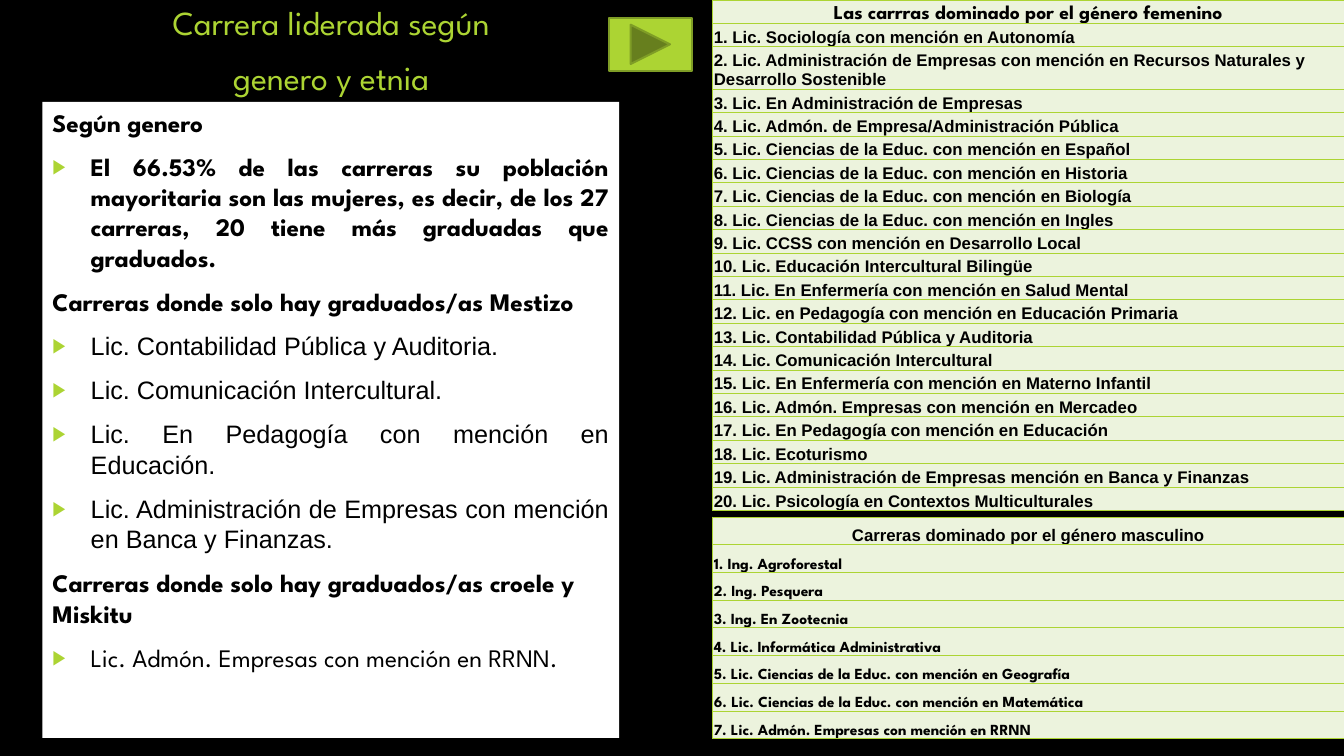
from dataclasses import dataclass

from lxml import etree
from pptx import Presentation
from pptx import util as u
from pptx.dml.color import RGBColor
from pptx.enum import shapes, text
from pptx.oxml.ns import qn


@dataclass(frozen=True)
class Theme:
    """Colours, fonts and type sizes of the slide."""
    black: str = "000000"
    white: str = "FFFFFF"
    lime: str = "ACD433"
    olive: str = "7F9D26"
    pale: str = "ECF3DD"
    display: str = "League Spartan"
    plain: str = "Arial"
    title: int = 24
    body: int = 18
    header: int = 14
    row: int = 12
    small: int = 11


THEME = Theme()
ALIGN = text.PP_ALIGN

TITLE = ["Carrera liderada según", "genero y etnia"]

FINDINGS = [
    ("Según genero", False, THEME.display, True, ALIGN.JUSTIFY),
    ("El 66.53% de las carreras su población mayoritaria son las mujeres, es decir, "
     "de los 27 carreras, 20 tiene más graduadas que graduados.",
     True, THEME.display, True, ALIGN.JUSTIFY),
    ("Carreras donde solo hay graduados/as Mestizo", False, THEME.display, True, ALIGN.JUSTIFY),
    ("Lic. Contabilidad Pública y Auditoria.", True, THEME.plain, False, ALIGN.JUSTIFY),
    ("Lic. Comunicación Intercultural.", True, THEME.plain, False, ALIGN.JUSTIFY),
    ("Lic. En Pedagogía con mención en Educación.", True, THEME.plain, False, ALIGN.JUSTIFY),
    ("Lic. Administración de Empresas con mención en Banca y Finanzas.",
     True, THEME.plain, False, ALIGN.JUSTIFY),
    ("Carreras donde solo hay graduados/as croele y Miskitu",
     False, THEME.display, True, ALIGN.LEFT),
    ("Lic. Admón. Empresas con mención en RRNN.", True, THEME.display, False, ALIGN.LEFT),
]

FEMALE_CAREERS = [
    "Lic. Sociología con mención en Autonomía",
    "Lic. Administración de Empresas con mención en Recursos Naturales y Desarrollo Sostenible",
    "Lic. En Administración de Empresas",
    "Lic. Admón. de Empresa/Administración Pública",
    "Lic. Ciencias de la Educ. con mención en Español",
    "Lic. Ciencias de la Educ. con mención en Historia",
    "Lic. Ciencias de la Educ. con mención en Biología",
    "Lic. Ciencias de la Educ. con mención en Ingles",
    "Lic. CCSS con mención en Desarrollo Local",
    "Lic. Educación Intercultural Bilingüe",
    "Lic. En Enfermería con mención en Salud Mental",
    "Lic. en Pedagogía con mención en Educación Primaria",
    "Lic. Contabilidad Pública y Auditoria",
    "Lic. Comunicación Intercultural",
    "Lic. En Enfermería con mención en Materno Infantil",
    "Lic. Admón. Empresas con mención en Mercadeo",
    "Lic. En Pedagogía con mención en Educación",
    "Lic. Ecoturismo",
    "Lic. Administración de Empresas mención en Banca y Finanzas",
    "Lic. Psicología en Contextos Multiculturales",
]

MALE_CAREERS = [
    "Ing. Agroforestal",
    "Ing. Pesquera",
    "Ing. En Zootecnia",
    "Lic. Informática Administrativa",
    "Lic. Ciencias de la Educ. con mención en Geografía",
    "Lic. Ciencias de la Educ. con mención en Matemática",
    "Lic. Admón. Empresas con mención en RRNN",
]


def rgb(value):
    """Turn a hex string into a colour."""
    return RGBColor.from_string(value)


def style(paragraph, font, size, color, bold, align):
    """Format a whole paragraph."""
    paragraph.alignment = align
    paragraph.font.name = font
    paragraph.font.size = u.Pt(size)
    paragraph.font.color.rgb = rgb(color)
    paragraph.font.bold = bold


def set_bullet(paragraph, bulleted):
    """Give a paragraph the arrow bullet, or clear the inherited one."""
    props = paragraph._p.get_or_add_pPr()
    indent = u.Inches(0.38) if bulleted else 0
    props.set("marL", str(indent))
    props.set("indent", str(-indent))
    if not bulleted:
        etree.SubElement(props, qn("a:buNone"))
        return
    color = etree.SubElement(props, qn("a:buClr"))
    etree.SubElement(color, qn("a:srgbClr"), val=THEME.lime)
    etree.SubElement(props, qn("a:buSzPct"), val="80000")
    etree.SubElement(props, qn("a:buFont"), typeface=THEME.plain)
    etree.SubElement(props, qn("a:buChar"), char="▶")


def place(shape, box):
    """Move a shape to a box given in inches."""
    shape.left, shape.top, shape.width, shape.height = map(u.Inches, box)


def fill_frame(placeholder, box, anchor, count):
    """Place a placeholder and return its paragraphs, spaced evenly."""
    place(placeholder, box)
    frame = placeholder.text_frame
    frame.word_wrap = True
    frame.auto_size = text.MSO_AUTO_SIZE.NONE
    frame.vertical_anchor = anchor
    paragraphs = [frame.paragraphs[0]] + [frame.add_paragraph() for _ in range(count - 1)]
    for index, paragraph in enumerate(paragraphs):
        paragraph.space_before = u.Pt(10 if index else 0)
    return paragraphs


def add_title(slide, box):
    """Write the two-line heading."""
    paragraphs = fill_frame(slide.shapes.title, box, text.MSO_ANCHOR.BOTTOM, len(TITLE))
    for paragraph, line in zip(paragraphs, TITLE):
        paragraph.text = line
        style(paragraph, THEME.display, THEME.title, THEME.lime, False, ALIGN.CENTER)


def add_findings(slide, box):
    """Write the white panel of findings by gender and ethnicity."""
    panel = slide.placeholders[1]
    panel.fill.solid()
    panel.fill.fore_color.rgb = rgb(THEME.white)
    paragraphs = fill_frame(panel, box, text.MSO_ANCHOR.TOP, len(FINDINGS))
    for paragraph, (line, bulleted, font, bold, align) in zip(paragraphs, FINDINGS):
        paragraph.text = line
        set_bullet(paragraph, bulleted)
        style(paragraph, font, THEME.body, THEME.black, bold, align)


def format_cell(cell, line, font, size, align):
    """Fill one bordered table cell."""
    props = cell._tc.get_or_add_tcPr()
    for side in "LRTB":
        border = etree.SubElement(props, qn(f"a:ln{side}"), w=str(u.Pt(0.75)))
        paint = etree.SubElement(border, qn("a:solidFill"))
        etree.SubElement(paint, qn("a:srgbClr"), val=THEME.lime)
    cell.fill.solid()
    cell.fill.fore_color.rgb = rgb(THEME.pale)
    cell.margin_left = cell.margin_right = cell.margin_top = u.Inches(0.01)
    cell.margin_bottom = 0
    cell.vertical_anchor = text.MSO_ANCHOR.BOTTOM
    cell.text = line
    style(cell.text_frame.paragraphs[0], font, size, THEME.black, True, align)


def add_careers(slide, box, heading, careers, heading_type, row_type, tall_rows=()):
    """Build a numbered one-column table; tall_rows lists the two-line rows."""
    count, tall = len(careers) + 1, 0.42
    table = slide.shapes.add_table(count, 1, *map(u.Inches, box)).table
    regular = (box[3] - tall * len(tall_rows)) / (count - len(tall_rows))
    for index, row in enumerate(table.rows):
        row.height = u.Inches(tall if index in tall_rows else regular)
    format_cell(table.cell(0, 0), heading, *heading_type, ALIGN.CENTER)
    for number, career in enumerate(careers, 1):
        format_cell(table.cell(number, 0), f"{number}. {career}", *row_type, ALIGN.LEFT)


def add_next_button(slide, box):
    """Draw the forward button."""
    button = slide.shapes.add_shape(
        shapes.MSO_SHAPE.ACTION_BUTTON_FORWARD_OR_NEXT, *map(u.Inches, box))
    button.shadow.inherit = False
    button.fill.solid()
    button.fill.fore_color.rgb = rgb(THEME.lime)
    button.line.color.rgb = rgb(THEME.olive)
    button.line.width = u.Pt(1.5)


def main():
    """Build and save the slide."""
    deck = Presentation()
    deck.slide_width, deck.slide_height = u.Inches(13.33), u.Inches(7.5)
    slide = deck.slides.add_slide(deck.slide_layouts[1])
    slide.background.fill.solid()
    slide.background.fill.fore_color.rgb = rgb(THEME.black)
    add_careers(slide, (7.07, 0, 6.26, 5.07), "Las carrras dominado por el género femenino",
                FEMALE_CAREERS, (THEME.display, THEME.header), (THEME.plain, THEME.row), (2,))
    add_careers(slide, (7.07, 5.13, 6.26, 2.2), "Carreras dominado por el género masculino",
                MALE_CAREERS, (THEME.plain, THEME.row), (THEME.display, THEME.small))
    add_title(slide, (0.12, 0.38, 6.33, 0.63))
    add_findings(slide, (0.42, 1.01, 5.72, 6.31))
    add_next_button(slide, (6.04, 0.18, 0.82, 0.52))
    deck.save("out.pptx")


if __name__ == "__main__":
    main()
